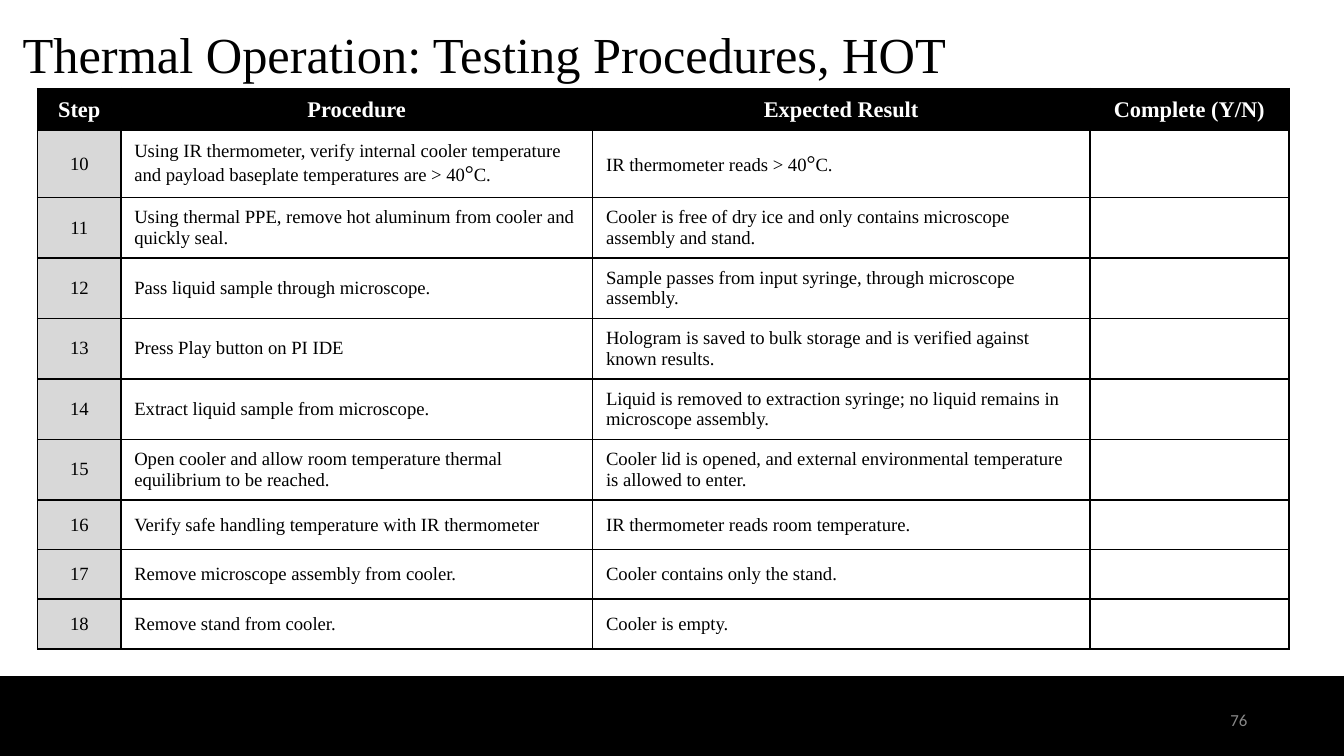
from lxml.etree import SubElement
from pptx import Presentation
from pptx.dml.color import RGBColor
from pptx.enum.shapes import MSO_SHAPE as Shape
from pptx.enum.text import MSO_ANCHOR as Anchor, PP_ALIGN as Align
from pptx.oxml.ns import qn
from pptx.util import Inches, Pt

SERIF = "Times New Roman"
BLACK, WHITE, GRAY, MUTED = "000000", "FFFFFF", "D8D8D8", "888888"
SLIDE_WIDTH = 10
SLIDE_HEIGHT = SLIDE_WIDTH * 9 / 16
FOOTER_TOP = 5.04
COLUMN_WIDTHS = [0.62, 3.51, 3.7, 1.48]
ROW_HEIGHTS = [0.31, 0.5] + [0.45] * 5 + [0.37] * 3
HEADERS = ["Step", "Procedure", "Expected Result", "Complete (Y/N)"]
FIRST_STEP = 10
STEPS = [
    ("Using IR thermometer, verify internal cooler temperature and payload baseplate temperatures are > 40°C.",
     "IR thermometer reads > 40°C."),
    ("Using thermal PPE, remove hot aluminum from cooler and quickly seal.",
     "Cooler is free of dry ice and only contains microscope assembly and stand."),
    ("Pass liquid sample through microscope.",
     "Sample passes from input syringe, through microscope assembly."),
    ("Press Play button on PI IDE",
     "Hologram is saved to bulk storage and is verified against known results."),
    ("Extract liquid sample from microscope.",
     "Liquid is removed to extraction syringe; no liquid remains in microscope assembly."),
    ("Open cooler and allow room temperature thermal equilibrium to be reached.",
     "Cooler lid is opened, and external environmental temperature is allowed to enter."),
    ("Verify safe handling temperature with IR thermometer",
     "IR thermometer reads room temperature."),
    ("Remove microscope assembly from cooler.", "Cooler contains only the stand."),
    ("Remove stand from cooler.", "Cooler is empty."),
]


def color(value):
    return RGBColor.from_string(value)


def add_run(paragraph, text, size, text_color=BLACK, font=SERIF, bold=False):
    run = paragraph.add_run()
    run.text = text
    run.font.size = Pt(size)
    run.font.name = font
    run.font.bold = bold
    run.font.color.rgb = color(text_color)


def add_text_box(slide, left, top, width, height, anchor):
    box = slide.shapes.add_textbox(Inches(left), Inches(top), Inches(width), Inches(height))
    frame = box.text_frame
    frame.word_wrap = True
    frame.vertical_anchor = anchor
    frame.margin_left = frame.margin_right = Inches(0.1)
    frame.margin_top = frame.margin_bottom = Inches(0.1)
    return frame.paragraphs[0]


def add_title(slide, left, top, width, height):
    paragraph = add_text_box(slide, left, top, width, height, Anchor.TOP)
    paragraph.line_spacing = 0.9
    add_run(paragraph, "Thermal Operation: Testing Procedures, HOT", 27)


def add_footer(slide, left, top, width, height):
    band = slide.shapes.add_shape(
        Shape.RECTANGLE, Inches(left), Inches(top), Inches(width), Inches(height))
    band.shadow.inherit = False
    band.fill.solid()
    band.fill.fore_color.rgb = color(BLACK)
    band.line.color.rgb = color(BLACK)
    band.line.width = Pt(1)
    paragraph = add_text_box(slide, left + width - 1.22, top + 0.1, 0.6, 0.43, Anchor.MIDDLE)
    paragraph.alignment = Align.RIGHT
    add_run(paragraph, "76", 9, MUTED, "Calibri")


def style_cell(cell, fill, side_margin, end_margin):
    cell.vertical_anchor = Anchor.MIDDLE
    cell.margin_left = cell.margin_right = Inches(side_margin)
    cell.margin_top = cell.margin_bottom = Inches(end_margin)
    properties = cell._tc.get_or_add_tcPr()
    for side in ("a:lnL", "a:lnR", "a:lnT", "a:lnB"):
        line = SubElement(properties, qn(side), w=str(Pt(1)))
        SubElement(SubElement(line, qn("a:solidFill")), qn("a:srgbClr"), val=BLACK)
    cell.fill.solid()
    cell.fill.fore_color.rgb = color(fill)


def fill_header_cell(cell, text):
    style_cell(cell, BLACK, 0.03, 0.01)
    paragraph = cell.text_frame.paragraphs[0]
    paragraph.alignment = Align.CENTER
    add_run(paragraph, text, 12, WHITE, bold=True)


def fill_step_cell(cell, text, is_number):
    style_cell(cell, GRAY if is_number else WHITE, 0.1, 0.05)
    paragraph = cell.text_frame.paragraphs[0]
    paragraph.font.size = Pt(10)
    paragraph.alignment = Align.CENTER if is_number else Align.LEFT
    before, degree, after = text.partition("°")
    for part, size in ((before, 10), (degree, 12), (after, 10)):
        if part:
            add_run(paragraph, part, size)


def add_procedure_table(slide, left, top):
    table = slide.shapes.add_table(
        len(ROW_HEIGHTS), len(COLUMN_WIDTHS), Inches(left), Inches(top),
        Inches(sum(COLUMN_WIDTHS)), Inches(sum(ROW_HEIGHTS))).table
    for column, width in zip(table.columns, COLUMN_WIDTHS):
        column.width = Inches(width)
    for row, height in zip(table.rows, ROW_HEIGHTS):
        row.height = Inches(height)
    for column_index, header in enumerate(HEADERS):
        fill_header_cell(table.cell(0, column_index), header)
    for row_index, (procedure, result) in enumerate(STEPS, 1):
        number = str(FIRST_STEP + row_index - 1)
        for column_index, text in enumerate((number, procedure, result, "")):
            fill_step_cell(table.cell(row_index, column_index), text, column_index == 0)


def main():
    presentation = Presentation()
    presentation.slide_width = Inches(SLIDE_WIDTH)
    presentation.slide_height = Inches(SLIDE_HEIGHT)
    slide = presentation.slides.add_slide(presentation.slide_layouts[6])
    add_footer(slide, 0, FOOTER_TOP, SLIDE_WIDTH, SLIDE_HEIGHT - FOOTER_TOP)
    add_title(slide, 0.07, 0.12, 9.32, 0.63)
    add_procedure_table(slide, 0.28, 0.66)
    presentation.save("out.pptx")


if __name__ == "__main__":
    main()
